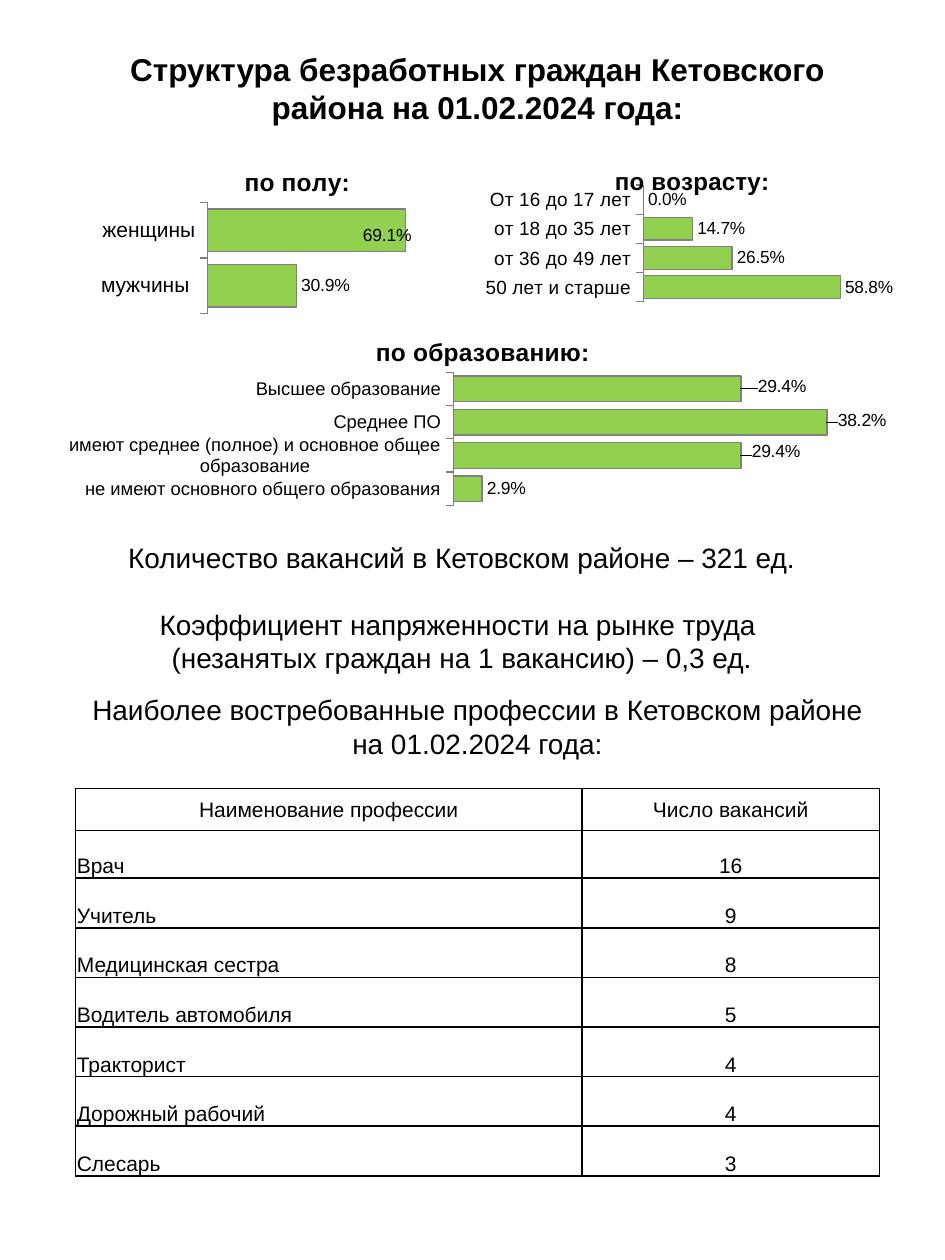
from dataclasses import dataclass

from lxml import etree
from pptx import Presentation
from pptx.chart.data import CategoryChartData
from pptx.dml.color import RGBColor
from pptx.enum.chart import XL_CHART_TYPE, XL_LABEL_POSITION, XL_TICK_MARK
from pptx.enum.text import MSO_ANCHOR, PP_ALIGN
from pptx.oxml import parse_xml
from pptx.oxml.ns import nsdecls, qn
from pptx.util import Inches, Pt


@dataclass
class Theme:
    font: str = "Arial"
    text: RGBColor = RGBColor(0, 0, 0)
    bar: RGBColor = RGBColor(0x92, 0xD0, 0x50)
    outline: RGBColor = RGBColor(0x80, 0x80, 0x80)
    title: Pt = Pt(18)
    body: Pt = Pt(16)
    chart_title: Pt = Pt(14)
    cell: Pt = Pt(12)
    label: Pt = Pt(10)


T = Theme()
PERCENT = "0.0%"


def style(font, size, bold=False):
    font.name, font.size, font.bold = T.font, size, bold
    font.color.rgb = T.text


def manual_layout(x, y, edge=False):
    """Chart layout: an offset, or a place from the chart's edge."""
    modes = '<c:xMode val="edge"/><c:yMode val="edge"/>' if edge else ""
    return parse_xml(f'<c:layout {nsdecls("c")}><c:manualLayout>{modes}'
                     f'<c:x val="{x}"/><c:y val="{y}"/></c:manualLayout></c:layout>')


prs = Presentation()
prs.slide_width, prs.slide_height = Inches(7.5), Inches(10)
s = prs.slides.add_slide(prs.slide_layouts[5])

# Title and statements: shape, box, paragraphs, size, bold
texts = [
    (s.shapes.title, (0.68, 0.35, 6.22, 0.71),
     ["Структура безработных граждан Кетовского района на 01.02.2024 года:"], T.title, True),
    (None, (0.41, 4.24, 6.51, 1.18),
     ["Количество вакансий в Кетовском районе – 321 ед.",
      "Коэффициент напряженности на рынке труда ",
      "(незанятых граждан на 1 вакансию) – 0,3 ед."], T.body, False),
    (None, (0.6, 5.45, 6.38, 0.64),
     ["Наиболее востребованные профессии в Кетовском районе на 01.02.2024 года:"],
     T.body, False),
]
for sp, box, lines, size, bold in texts:
    box = [Inches(v) for v in box]
    if sp is None:
        sp = s.shapes.add_textbox(*box)
    sp.left, sp.top, sp.width, sp.height = box
    tf = sp.text_frame
    tf.word_wrap = True
    tf.vertical_anchor = MSO_ANCHOR.TOP
    tf.text = "\n".join(lines)
    for i, p in enumerate(tf.paragraphs):
        p.alignment = PP_ALIGN.CENTER
        p.space_before = Pt(19 if i == 1 else 0)
        style(p.runs[0].font, size, bold)

# Charts: title, title place, box, plot area, axis maximum, category size,
# reversed order, categories with values, moved labels
charts = [
    ("по полу:", (0.42, 0.05), (0.68, 1.22, 2.92, 1.34), (0.332, 0.29, 0.623, 0.656),
     0.8, Pt(12), False, {"мужчины ": 0.309, "женщины": 0.691}, {1: (-0.13, 0.03)}),
    ("по возрасту:", (0.38, 0.05), (3.51, 1.22, 3.58, 1.18), (0.454, 0.212, 0.53, 0.788),
     0.7, Pt(11), True,
     {"От 16 до 17 лет": 0, "от 18 до 35 лет": 0.147,
      "от 36 до 49 лет": 0.265, " 50 лет и старше": 0.588}, {}),
    ("по образованию:", (0.37, 0.05), (0.44, 2.56, 6.78, 1.5), (0.466, 0.263, 0.515, 0.705),
     0.45, Pt(10.5), True,
     {"Высшее образование": 0.294, "Среднее ПО": 0.382,
      "имеют среднее (полное) и основное общее образование": 0.294,
      "не имеют основного общего образования": 0.029},
     {0: (0.014, -0.01), 1: (0.007, -0.01), 2: (0.007, -0.02)}),
]
for title, place, box, plot_box, top, size, rev, data, moved in charts:
    cd = CategoryChartData(number_format=PERCENT)
    cd.categories = list(data)
    cd.add_series(title, list(data.values()))
    chart = s.shapes.add_chart(XL_CHART_TYPE.BAR_CLUSTERED,
                               *[Inches(v) for v in box], cd).chart
    style(chart.font, T.cell)
    chart.has_legend = False

    chart.chart_title.text_frame.text = title
    style(chart.chart_title.text_frame.paragraphs[0].runs[0].font, T.chart_title, True)
    title_xml = chart.chart_title._element
    for old in title_xml.findall(qn("c:layout")):
        title_xml.remove(old)
    title_xml.find(qn("c:tx")).addnext(manual_layout(*place, edge=True))

    area = chart._chartSpace.chart.plotArea
    for old in area.findall(qn("c:layout")):
        area.remove(old)
    layout = manual_layout(*plot_box[:2], edge=True)
    inner = layout[0]
    target = etree.Element(qn("c:layoutTarget"), val="inner")
    inner.insert(0, target)
    for tag, value in zip("wh", plot_box[2:]):
        etree.SubElement(inner, qn(f"c:{tag}"), val=str(value))
    area.insert(0, layout)

    axis = chart.category_axis
    axis.reverse_order = rev
    axis.major_tick_mark = XL_TICK_MARK.OUTSIDE
    axis.format.line.color.rgb = T.outline
    style(axis.tick_labels.font, size)
    values = chart.value_axis
    values.visible = values.has_major_gridlines = False
    values.minimum_scale, values.maximum_scale = 0, top

    plot = chart.plots[0]
    plot.gap_width, plot.vary_by_categories = 30, False
    ser = plot.series[0]
    ser.format.fill.solid()
    ser.format.fill.fore_color.rgb = T.bar
    ser.format.line.color.rgb = T.outline
    ser.format.line.width = Pt(0.75)
    labels = ser.data_labels
    labels.show_value = True
    labels.number_format, labels.number_format_is_linked = PERCENT, False
    labels.position = XL_LABEL_POSITION.OUTSIDE_END
    style(labels.font, T.label)
    for i, offset in moved.items():
        label = ser.points[i].data_label
        style(label.font, T.label)
        label.position = XL_LABEL_POSITION.OUTSIDE_END
        idx = labels._element.findall(qn("c:dLbl"))[-1].find(qn("c:idx"))
        idx.addnext(etree.Element(qn("c:numFmt"), formatCode=PERCENT, sourceLinked="0"))
        idx.addnext(manual_layout(*offset))

# Table of professions
rows = [("Наименование профессии", "Число вакансий"),
        ("Врач", "16"), ("Учитель", "9"), ("Медицинская сестра", "8"),
        ("Водитель автомобиля", "5"), ("Тракторист", "4"),
        ("Дорожный рабочий", "4"), ("Слесарь", "3")]
table = s.shapes.add_table(len(rows), 2, Inches(0.6), Inches(6.26),
                           Inches(6.38), Inches(3.07)).table
table.first_row = table.horz_banding = False
table.columns[0].width, table.columns[1].width = Inches(4.02), Inches(2.36)
for i, row in enumerate(rows):
    table.rows[i].height = Inches({0: 0.33, 1: 0.38}.get(i, 0.394))
    for j, text in enumerate(row):
        cell = table.cell(i, j)
        cell.margin_left = cell.margin_right = cell.margin_top = Inches(0.01)
        cell.margin_bottom = 0
        cell.vertical_anchor = MSO_ANCHOR.BOTTOM if i else MSO_ANCHOR.MIDDLE
        cell.text = text
        p = cell.text_frame.paragraphs[0]
        p.alignment = PP_ALIGN.LEFT if i and j == 0 else PP_ALIGN.CENTER
        style(p.runs[0].font, T.cell)
        cell.fill.background()
        for n, side in enumerate(("lnL", "lnR", "lnT", "lnB")):
            cell._tc.get_or_add_tcPr().insert(n, parse_xml(
                f'<a:{side} {nsdecls("a")} w="12700"><a:solidFill>'
                f'<a:srgbClr val="{T.text}"/></a:solidFill></a:{side}>'))

prs.save("out.pptx")
